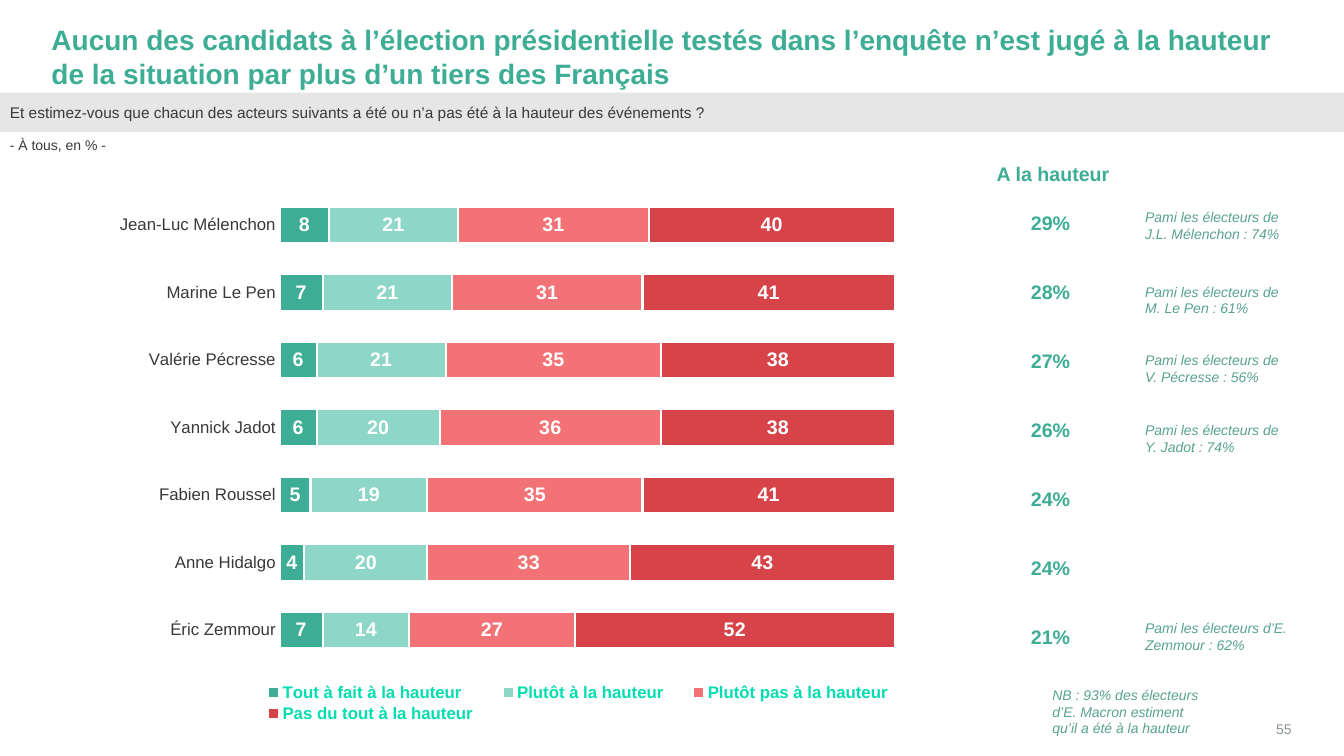
from lxml import etree
from pptx import Presentation
from pptx.chart.data import CategoryChartData
from pptx.dml.color import RGBColor
from pptx.enum.chart import (XL_CHART_TYPE, XL_LABEL_POSITION,
                             XL_LEGEND_POSITION, XL_TICK_MARK)
from pptx.enum.shapes import MSO_SHAPE
from pptx.enum.text import MSO_ANCHOR, PP_ALIGN
from pptx.oxml import parse_xml
from pptx.oxml.ns import nsdecls, qn
from pptx.util import Pt

PX = 9144
FONT = "Arial"
GREEN, SAGE, INK, WHITE = "3EAD95", "58A291", "3B3838", "FFFFFF"
LEFT, CENTER, RIGHT, JUSTIFY = PP_ALIGN.LEFT, PP_ALIGN.CENTER, PP_ALIGN.RIGHT, PP_ALIGN.JUSTIFY
TOP, MIDDLE, BOTTOM = MSO_ANCHOR.TOP, MSO_ANCHOR.MIDDLE, MSO_ANCHOR.BOTTOM
STACKED = XL_CHART_TYPE.BAR_STACKED_100
RECTANGLE = MSO_SHAPE.RECTANGLE
NO_TICK = XL_TICK_MARK.NONE
LABEL_CENTER = XL_LABEL_POSITION.CENTER
LEGEND_BOTTOM = XL_LEGEND_POSITION.BOTTOM

CANDIDATES = ["Jean-Luc Mélenchon", "Marine Le Pen", "Valérie Pécresse", "Yannick Jadot",
              "Fabien Roussel", "Anne Hidalgo", "Éric Zemmour"]
OPINIONS = [
    ("Tout à fait à la hauteur", GREEN, [8, 7, 6, 6, 5, 4, 7]),
    ("Plutôt à la hauteur", "8ED6C7", [21, 21, 21, 20, 19, 20, 14]),
    ("Plutôt pas à la hauteur", "F27275", [31, 31, 35, 36, 35, 33, 27]),
    ("Pas du tout à la hauteur", "D64449", [40, 41, 38, 38, 41, 43, 52]),
]
TOTALS = [29, 28, 27, 26, 24, 24, 21]
VOTER_NOTES = [
    (0, "de J.L. Mélenchon : 74%"),
    (74, "de M. Le Pen : 61%"),
    (142, "de V. Pécresse : 56%"),
    (211, "de Y. Jadot : 74%"),
    (408, "d’E. Zemmour : 62%"),
]


def px(*lengths):
    return [length * PX for length in lengths]


def rgb(value):
    return RGBColor.from_string(value)


def style_font(font, size, color, bold=False, italic=False):
    font.name = FONT
    font.size = Pt(size)
    font.color.rgb = rgb(color)
    font.bold = bold
    font.italic = italic


def write(frame, text, size=10, color=INK, bold=False, italic=False,
          align=LEFT, anchor=TOP, insets=(10, 5, 10, 5)):
    frame.word_wrap = True
    frame.vertical_anchor = anchor
    (frame.margin_left, frame.margin_top,
     frame.margin_right, frame.margin_bottom) = px(*insets)
    paragraph = frame.paragraphs[0]
    paragraph.alignment = align
    run = paragraph.add_run()
    run.text = text
    style_font(run.font, size, color, bold, italic)


def add_text(slide, box, text, **look):
    write(slide.shapes.add_textbox(*px(*box)).text_frame, text, **look)


def add_heading(slide, left, top, width, height):
    add_text(slide, (left + 51, top + 38, width - 102, 36),
             "Aucun des candidats à l’élection présidentielle testés dans l’enquête n’est "
             "jugé à la hauteur de la situation par plus d’un tiers des Français",
             size=20, color=GREEN, bold=True, anchor=MIDDLE, insets=(0, 0, 0, 0))
    question = slide.shapes.add_shape(RECTANGLE, *px(left, top + 92, width, 39))
    question.shadow.inherit = False
    question.fill.solid()
    question.fill.fore_color.rgb = rgb("E6E6E6")
    question.line.fill.background()
    write(question.text_frame,
          "Et estimez-vous que chacun des acteurs suivants a été ou n’a pas été "
          "à la hauteur des événements ?",
          size=11, align=JUSTIFY, anchor=MIDDLE, insets=(10, 10, 20, 10))
    add_text(slide, (left, top + height - 27, 217, 27), "- À tous, en % -")


def manual_layout(x, y, w, h, target=""):
    return parse_xml(
        f'<c:layout {nsdecls("c")}><c:manualLayout>{target}'
        '<c:xMode val="edge"/><c:yMode val="edge"/>'
        f'<c:x val="{x}"/><c:y val="{y}"/><c:w val="{w}"/><c:h val="{h}"/>'
        '</c:manualLayout></c:layout>')


def place_plot_and_legend(chart):
    plot_area = chart._chartSpace.chart.plotArea
    for layout in plot_area.findall(qn("c:layout")):
        plot_area.remove(layout)
    plot_area.insert(0, manual_layout(0.22, 0.03, 0.69, 0.84,
                                      '<c:layoutTarget val="inner"/>'))
    legend = chart.legend._element
    for layout in legend.findall(qn("c:layout")):
        legend.remove(layout)
    legend.find(qn("c:legendPos")).addnext(manual_layout(0.18, 0.9, 0.75, 0.08))


def add_opinion_chart(slide, left, top, width, height):
    data = CategoryChartData(number_format="General")
    data.categories = CANDIDATES
    for opinion, _, shares in OPINIONS:
        data.add_series(opinion, shares)
    chart = slide.shapes.add_chart(STACKED, *px(left, top, width, height), data).chart
    style_font(chart.font, 10, "014537")
    chart.has_title = False
    chart.has_legend = True
    chart.legend.position = LEGEND_BOTTOM
    chart.legend.include_in_layout = False
    style_font(chart.legend.font, 12, "03DDB0", bold=True)

    names = chart.category_axis
    names.reverse_order = True
    names.major_tick_mark = names.minor_tick_mark = NO_TICK
    names.format.line.fill.background()
    style_font(names.tick_labels.font, 12, INK)
    chart.value_axis.has_major_gridlines = False
    chart.value_axis.visible = False

    bars = chart.plots[0]
    bars.gap_width = 85
    bars.overlap = 100
    bars.vary_by_categories = False
    for series, (_, color, _) in zip(bars.series, OPINIONS):
        series.format.fill.solid()
        series.format.fill.fore_color.rgb = rgb(color)
        series.format.line.color.rgb = rgb(WHITE)
        series.format.line.width = Pt(1.5)
        labels = series.data_labels
        labels.show_value = True
        labels.position = LABEL_CENTER
        style_font(labels.font, 14, WHITE, bold=True)
    place_plot_and_legend(chart)


def add_borders(cell, bottom):
    properties = cell._tc.get_or_add_tcPr()
    for index, (side, points) in enumerate(
            [("lnL", 1), ("lnR", 1), ("lnT", 1), ("lnB", bottom)]):
        line = etree.Element(qn(f"a:{side}"), w=str(Pt(points)))
        fill = etree.SubElement(line, qn("a:solidFill"))
        etree.SubElement(fill, qn("a:srgbClr"), val=WHITE)
        properties.insert(index, line)


def add_totals(slide, left, top, width, height):
    add_text(slide, (left, top, width, 24), "A la hauteur", size=14, color=GREEN,
             bold=True, align=CENTER, insets=(0, 0, 0, 0))
    row_height = (height - 27) * PX // len(TOTALS)
    table = slide.shapes.add_table(
        len(TOTALS), 1, *px(left + 36, top + 27, 98, height - 27)).table
    table.first_row = table.horz_banding = False
    for index, total in enumerate(TOTALS):
        table.rows[index].height = row_height
        cell = table.cell(index, 0)
        cell.fill.background()
        add_borders(cell, 3 if index == 0 else 1)
        write(cell.text_frame, f"{total}%", size=14, color=GREEN, bold=True, align=CENTER)
        cell.vertical_anchor = MIDDLE
        cell.margin_left, cell.margin_top, cell.margin_right, cell.margin_bottom = px(10, 5, 10, 5)


def add_voter_notes(slide, left, top, width, height):
    for offset, voters in VOTER_NOTES:
        add_text(slide, (left, top + offset, width, 27), f"Pami les électeurs {voters}",
                 color=SAGE, italic=True)
    add_text(slide, (left - 92, top + height - 27, width, 27),
             "NB : 93% des électeurs d’E. Macron estiment qu’il a été à la hauteur",
             color=SAGE, italic=True)


def add_page_number(slide, left, top, width, height):
    add_text(slide, (left, top, width, height), "55", color="8C9491",
             align=RIGHT, anchor=BOTTOM, insets=(0, 0, 0, 0))


def main():
    deck = Presentation()
    deck.slide_width, deck.slide_height = px(1333, 750)
    slide = deck.slides.add_slide(deck.slide_layouts[6])
    add_heading(slide, 0, 0, 1333, 158)
    add_opinion_chart(slide, 83, 173, 884, 558)
    add_totals(slide, 957, 161, 175, 506)
    add_voter_notes(slide, 1126, 202, 166, 501)
    add_page_number(slide, 1222, 707, 59, 24)
    deck.save("out.pptx")


if __name__ == "__main__":
    main()
